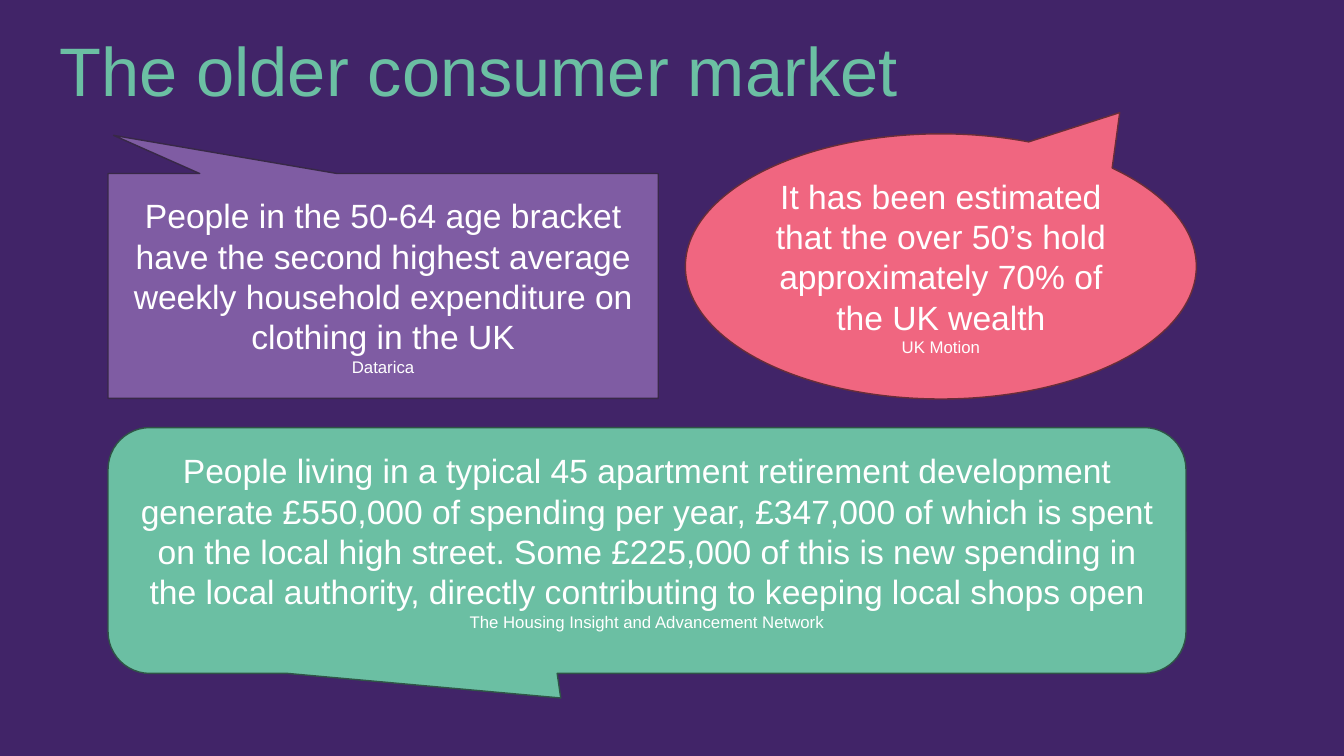
"""Build a slide of three callouts about the older consumer market."""
import dataclasses

import pptx
import pptx.dml.color
import pptx.enum.shapes
import pptx.enum.text
import pptx.util

Pt = pptx.util.Pt
Callout = pptx.enum.shapes.MSO_SHAPE
Align = pptx.enum.text.PP_ALIGN
Anchor = pptx.enum.text.MSO_ANCHOR


@dataclasses.dataclass(frozen=True)
class Theme:
    font: str = "Arial"
    background: str = "412468"
    white: str = "FFFFFF"
    green: str = "6BBFA3"
    green_edge: str = "2F5447"
    pink: str = "F06680"
    pink_edge: str = "692D38"
    purple: str = "7F5CA3"
    purple_edge: str = "382847"
    title_size: float = 49
    quote_size: float = 24
    source_size: float = 12


class SlideBuilder:
    def __init__(self, slide, theme):
        self.slide = slide
        self.theme = theme

    def paint(self, fill, color):
        fill.solid()
        fill.fore_color.rgb = pptx.dml.color.RGBColor.from_string(color)

    def background(self):
        self.paint(self.slide.background.fill, self.theme.background)

    def paragraph(self, para, text, size, color, align):
        para.text = text
        para.alignment = align
        for span in para.runs:
            span.font.name = self.theme.font
            span.font.size = Pt(size)
            self.paint(span.font.fill, color)

    def title(self, text, left, top, width, height):
        box = self.slide.shapes.title
        box.left, box.top, box.width, box.height = map(Pt, (left, top, width, height))
        frame = box.text_frame
        frame.margin_left = frame.margin_right = frame.margin_top = frame.margin_bottom = 0
        frame.vertical_anchor = Anchor.TOP
        frame.auto_size = pptx.enum.text.MSO_AUTO_SIZE.NONE
        para = frame.paragraphs[0]
        self.paragraph(para, text, self.theme.title_size, self.theme.green, Align.LEFT)
        para.line_spacing = Pt(36)

    def callout(self, kind, place, pointer, fill, edge, quote, source, bottom_inset=3.6):
        box = self.slide.shapes.add_shape(kind, *map(Pt, place))
        box.shadow.inherit = False
        for index, value in enumerate(pointer):
            box.adjustments[index] = value
        self.paint(box.fill, fill)
        self.paint(box.line.fill, edge)
        box.line.width = Pt(1)
        frame = box.text_frame
        frame.word_wrap = True
        frame.vertical_anchor = Anchor.MIDDLE
        frame.margin_bottom = Pt(bottom_inset)
        theme = self.theme
        self.paragraph(frame.paragraphs[0], quote, theme.quote_size, theme.white, Align.CENTER)
        self.paragraph(frame.add_paragraph(), source, theme.source_size, theme.white, Align.CENTER)


def main():
    theme = Theme()
    deck = pptx.Presentation()
    deck.slide_width, deck.slide_height = Pt(960), Pt(540)
    page = SlideBuilder(deck.slides.add_slide(deck.slide_layouts[5]), theme)
    page.background()
    page.title("The older consumer market", 42.5, 42.5, 875, 81.4)
    page.callout(
        Callout.OVAL_CALLOUT, (489.6, 95.6, 365, 189.4), (0.35, -0.58),
        theme.pink, theme.pink_edge,
        "It has been estimated that the over 50’s hold approximately 70% of the UK wealth",
        "UK Motion")
    page.callout(
        Callout.ROUNDED_RECTANGULAR_CALLOUT, (77.2, 305.4, 770, 175.6), (-0.08, 0.6, 0.17),
        theme.green, theme.green_edge,
        "People living in a typical 45 apartment retirement development generate £550,000 "
        "of spending per year, £347,000 of which is spent on the local high street. Some "
        "£225,000 of this is new spending in the local authority, directly contributing to "
        "keeping local shops open",
        "The Housing Insight and Advancement Network", bottom_inset=17.4)
    page.callout(
        Callout.RECTANGULAR_CALLOUT, (77.2, 124, 393, 160.6), (-0.49, -0.67),
        theme.purple, theme.purple_edge,
        "People in the 50-64 age bracket have the second highest average weekly household "
        "expenditure on clothing in the UK",
        "Datarica")
    deck.save("out.pptx")


if __name__ == "__main__":
    main()
